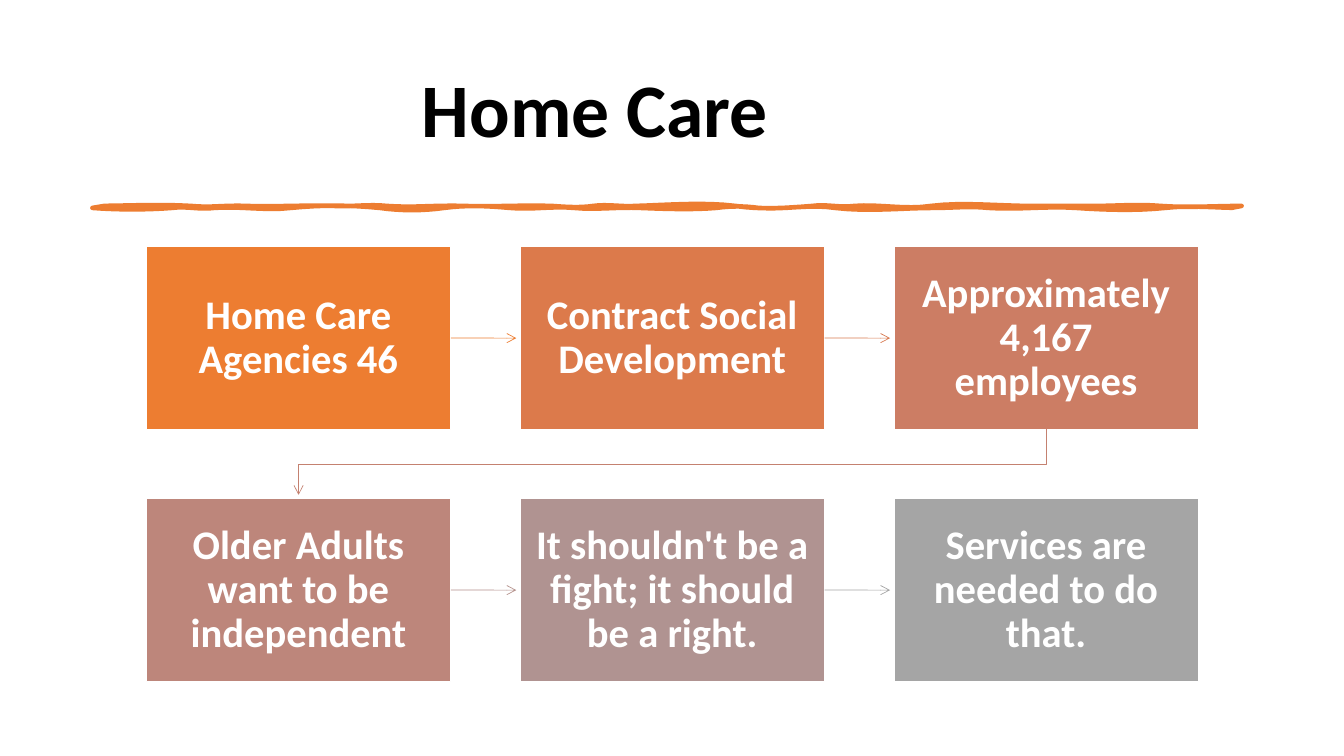
from lxml import etree
from pptx import Presentation
from pptx.dml.color import RGBColor
from pptx.enum.shapes import MSO_CONNECTOR, MSO_SHAPE
from pptx.enum.text import MSO_ANCHOR, MSO_AUTO_SIZE, PP_ALIGN
from pptx.oxml.ns import qn
from pptx.util import Cm, Pt

RECT = MSO_SHAPE.RECTANGLE
STRAIGHT = MSO_CONNECTOR.STRAIGHT
MIDDLE = MSO_ANCHOR.MIDDLE
NO_FIT = MSO_AUTO_SIZE.NONE
LEFT, CENTER = PP_ALIGN.LEFT, PP_ALIGN.CENTER

FONT = "Calibri"
BLACK = RGBColor(0x00, 0x00, 0x00)
WHITE = RGBColor(0xFF, 0xFF, 0xFF)
ORANGE = RGBColor(0xED, 0x7D, 0x31)
AMBER = RGBColor(0xDC, 0x7A, 0x4B)
CORAL = RGBColor(0xCC, 0x7D, 0x64)
ROSE = RGBColor(0xBD, 0x86, 0x7B)
MAUVE = RGBColor(0xB0, 0x93, 0x91)
GRAY = RGBColor(0xA5, 0xA5, 0xA5)
RUST = RGBColor(0xD8, 0x7A, 0x51)
CLAY = RGBColor(0xC4, 0x81, 0x70)
DUSK = RGBColor(0xB4, 0x90, 0x8B)

# Step text, box colour, colour of the arrow that leaves it
STEPS = [
    ("Home Care Agencies 46", ORANGE, ORANGE),
    ("Contract Social Development", AMBER, RUST),
    ("Approximately 4,167 employees", CORAL, CLAY),
    ("Older Adults want to be independent", ROSE, DUSK),
    ("It shouldn't be a fight; it should be a right.", MAUVE, GRAY),
    ("Services are needed to do that.", GRAY, None),
]
COLS = 3

# Brush edges: end of each curve in cm, then the pull of its two handles
UPPER = [
    (2.49, 0, -2), (3.86, 2, -1), (6.07, 1, -1), (7.42, 1, -2),
    (9.35, 2, -1), (11.58, 1, -1), (12.62, 1, 2), (13.69, -2, 1),
    (16.21, -1, -4), (18.14, 4, 2), (19.2, -2, 2), (21.13, -2, 4),
    (23.65, -4, 0), (25.27, 0, 0), (26.92, 0, -2), (28.96, 2, 0),
]
LOWER = [
    (27.03, 0, -3), (24.79, 3, 2), (22.58, -2, 2), (21.23, -2, 0),
    (18.72, 0, 4), (16.79, -4, 2), (15.72, -2, -2), (13.79, 2, 1),
    (12.14, -1, 2), (10.52, -2, 2), (8.86, -2, -3), (7.24, 3, 3),
    (5, -3, -3), (3.07, 3, -2), (2.01, 2, -2), (0, 2, 2),
]
PULL = 0.025
PARTS = 8


def add_run(frame, text, size, color, align):
    para = frame.paragraphs[0]
    para.alignment = align
    para.line_spacing = 0.9
    run = para.add_run()
    run.text = text
    font = run.font
    font.name, font.size, font.bold = FONT, Pt(size), True
    font.color.rgb = color


def add_title(slide, left, top, width, height):
    title = slide.shapes.title
    title.left, title.top = Cm(left), Cm(top)
    title.width, title.height = Cm(width), Cm(height)
    frame = title.text_frame
    frame.auto_size = NO_FIT
    frame.vertical_anchor = MIDDLE
    frame.margin_left = Cm(8.3)
    add_run(frame, "Home Care", 54, BLACK, LEFT)


def trace(start, level, edge):
    """Points along a wavy edge, in cm from the corner of its box."""
    points = []
    for end, first, second in edge:
        for part in range(1, PARTS + 1):
            t = part / PARTS
            wave = 3 * t * (1 - t) * (first * (1 - t) + second * t)
            points.append((start + (end - start) * t, level + PULL * wave))
        start = end
    return points


def add_path(slide, points, closed):
    spots = [(Cm(x), Cm(y)) for x, y in points]
    pen = slide.shapes.build_freeform(*spots[0])
    pen.add_line_segments(spots[1:], close=closed)
    path = pen.convert_to_shape()
    path.shadow.inherit = False
    return path


def add_brush(slide, left, top, width, height):
    edges = trace(0, 0, UPPER) + trace(width, height, LOWER)
    points = [(left + x, top + y) for x, y in edges]
    brush = add_path(slide, points, True)
    brush.fill.solid()
    brush.fill.fore_color.rgb = ORANGE
    brush.line.color.rgb = ORANGE
    brush.line.width = Pt(3.25)


def set_arrow(shape, color):
    shape.line.color.rgb = color
    shape.line.width = Pt(0.5)
    line = shape.element.spPr.find(qn("a:ln"))
    etree.SubElement(line, qn("a:tailEnd"), type="arrow")


def add_step(slide, left, top, width, height, text, color):
    box = slide.shapes.add_shape(RECT, Cm(left), Cm(top), Cm(width), Cm(height))
    box.shadow.inherit = False
    box.fill.solid()
    box.fill.fore_color.rgb = color
    box.line.color.rgb = WHITE
    box.line.width = Pt(1)
    frame = box.text_frame
    frame.word_wrap = True
    frame.vertical_anchor = MIDDLE
    frame.margin_left = frame.margin_right = Cm(0.38)
    frame.margin_top = frame.margin_bottom = Cm(0.41)
    add_run(frame, text, 29, WHITE, CENTER)
    return box


def add_flow(slide, left, top, width, height):
    wide, high = 7.67, 4.6
    across = (width - wide) / (COLS - 1)
    down = height - high
    short = 0.1  # space left before the next box
    for i, (text, color, tint) in enumerate(STEPS):
        row, col = divmod(i, COLS)
        x, y = left + col * across, top + row * down
        box = add_step(slide, x, y, wide, high, text, color)
        if tint is None:
            continue
        if col < COLS - 1:
            # Arrow to the next box in the row
            mid = Cm(y + high / 2)
            arrow = slide.shapes.add_connector(
                STRAIGHT, Cm(x + wide), mid, Cm(x + across - short), mid)
            arrow.begin_connect(box, 3)
            set_arrow(arrow, tint)
            etree.SubElement(arrow.element.spPr, qn("a:effectLst"))
        else:
            # Bent arrow to the start of the next row
            begin, end = x + wide / 2, left + wide / 2
            floor, roof = y + high, y + down
            turn = (floor + roof) / 2
            bend = add_path(slide, [(begin, floor), (begin, turn),
                                    (end, turn), (end, roof - short)], False)
            bend.fill.background()
            set_arrow(bend, tint)


def main():
    deck = Presentation()
    deck.slide_width, deck.slide_height = Cm(33.87), Cm(19.05)
    slide = deck.slides.add_slide(deck.slide_layouts[5])
    add_title(slide, 2.33, 1.01, 29.21, 3.68)
    add_brush(slide, 2.33, 5.19, 28.96, 0.05)
    add_flow(slide, 3.69, 6.22, 26.51, 10.95)
    deck.save("out.pptx")


if __name__ == "__main__":
    main()
